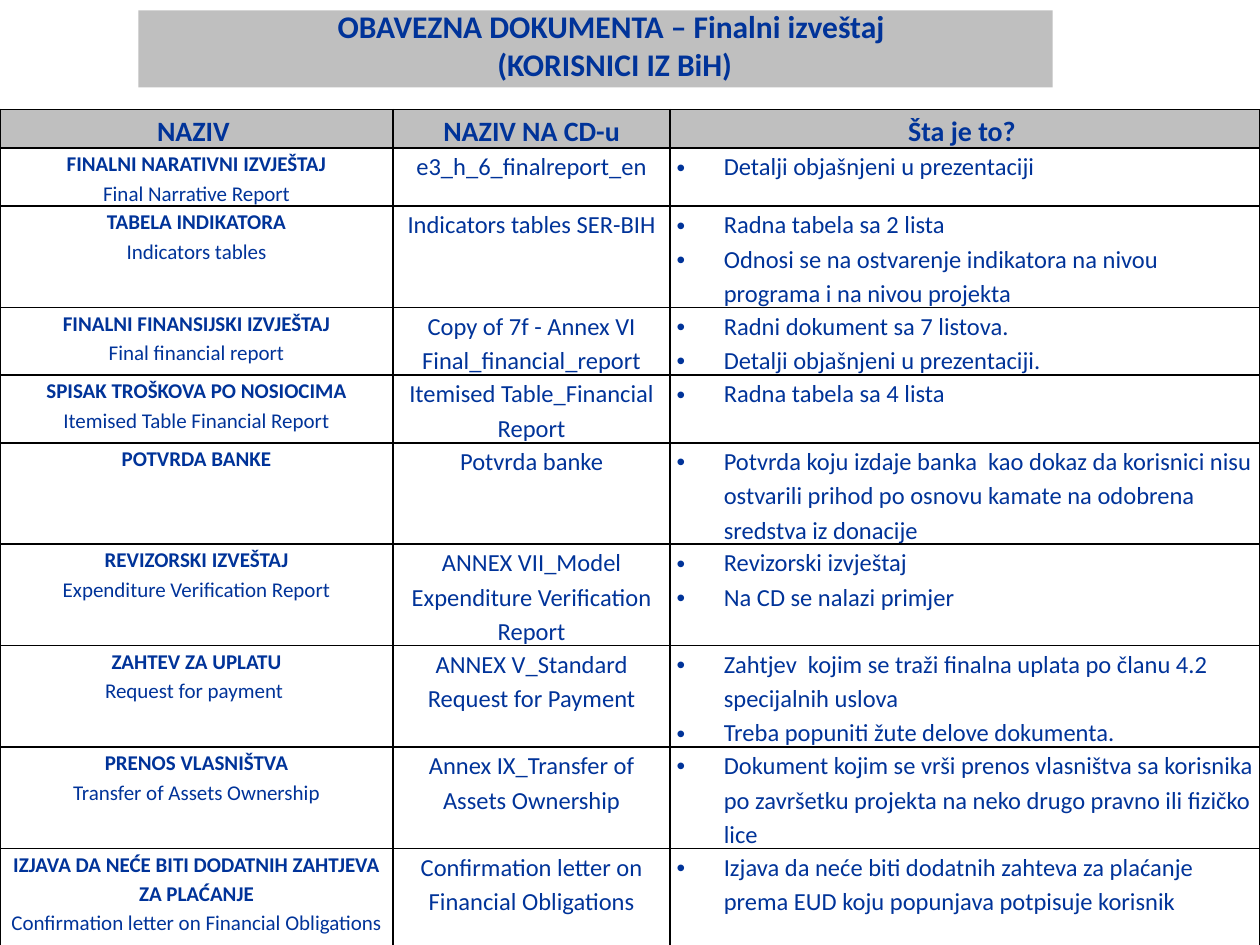
"""Builds a slide listing the mandatory documents of the final report."""
from lxml import etree
from pptx import Presentation
from pptx.dml.color import RGBColor
from pptx.enum import shapes, text
from pptx.oxml.ns import qn
from pptx.util import Pt

BLUE, GREY, BLACK = "003399", "BFBFBF", "000000"
FONT = "Calibri"
TITLE = ["OBAVEZNA DOKUMENTA – Finalni izveštaj ", "(KORISNICI IZ BiH)"]
HEADERS = ["NAZIV ", "NAZIV NA CD-u", "Šta je to? "]
COL_WIDTHS = [224.6, 158.4, 337]
HEADER_HEIGHT = 16.6
DOCUMENTS = [
    (32.4, "FINALNI NARATIVNI IZVJEŠTAJ", "Final Narrative Report",
     "e3_h_6_finalreport_en", ["Detalji objašnjeni u prezentaciji"]),
    (54.7, "TABELA INDIKATORA", "Indicators tables", "Indicators tables SER-BIH",
     ["Radna tabela sa 2 lista",
      "Odnosi se na ostvarenje indikatora na nivou programa i na nivou projekta"]),
    (36.7, "FINALNI FINANSIJSKI IZVJEŠTAJ", "Final financial report",
     "Copy of 7f - Annex VI Final_financial_report",
     ["Radni dokument sa 7 listova.", "Detalji objašnjeni u prezentaciji."]),
    (36.7, "SPISAK TROŠKOVA PO NOSIOCIMA", "Itemised Table Financial Report",
     "Itemised Table_Financial Report", ["Radna tabela sa 4 lista"]),
    (54.7, "POTVRDA BANKE", None, "Potvrda banke",
     ["Potvrda koju izdaje banka  kao dokaz da korisnici nisu ostvarili prihod "
      "po osnovu kamate na odobrena sredstva iz donacije"]),
    (54.7, "REVIZORSKI IZVEŠTAJ", "Expenditure Verification Report",
     "ANNEX VII_Model Expenditure Verification Report",
     ["Revizorski izvještaj", "Na CD se nalazi primjer"]),
    (54.7, "ZAHTEV ZA UPLATU", "Request for payment ",
     "ANNEX V_Standard Request for Payment",
     ["Zahtjev  kojim se traži finalna uplata po članu 4.2 specijalnih uslova",
      "Treba popuniti žute delove dokumenta."]),
    (54.7, "PRENOS VLASNIŠTVA", "Transfer of Assets Ownership",
     "Annex IX_Transfer of Assets Ownership",
     ["Dokument kojim se vrši prenos vlasništva sa korisnika po završetku "
      "projekta na neko drugo pravno ili fizičko lice"]),
    (64.8, "IZJAVA DA NEĆE BITI DODATNIH ZAHTJEVA ZA PLAĆANJE",
     "Confirmation letter on Financial Obligations",
     "Confirmation letter on Financial Obligations",
     ["Izjava da neće biti dodatnih zahteva za plaćanje prema EUD koju "
      "popunjava potpisuje korisnik"]),
]


def paint(fill, color):
    fill.solid()
    fill.fore_color.rgb = RGBColor.from_string(color)


def write(tf, content, size, bold=False, bullet=False, spacing=1.15, first=True):
    p = tf.paragraphs[0] if first else tf.add_paragraph()
    p.alignment = text.PP_ALIGN.LEFT if bullet else text.PP_ALIGN.CENTER
    if bullet:
        pPr = p._p.get_or_add_pPr()
        pPr.set("marL", str(Pt(27)))
        pPr.set("indent", str(-Pt(27)))
        etree.SubElement(pPr, qn("a:buFont"), typeface="Arial")
        etree.SubElement(pPr, qn("a:buChar"), char="•")
    p.line_spacing = spacing
    p.space_before = Pt(0)
    r = p.add_run()
    r.text = content
    r.font.name, r.font.size, r.font.bold = FONT, Pt(size), bold
    r.font.color.rgb = RGBColor.from_string(BLUE)


def style_cell(cell, color=None):
    cell.margin_left = cell.margin_right = Pt(3.6)
    cell.margin_top = cell.margin_bottom = Pt(0)
    tcPr = cell._tc.get_or_add_tcPr()
    for side in ("lnL", "lnR", "lnT", "lnB"):
        ln = etree.SubElement(tcPr, qn("a:" + side), w=str(Pt(1)))
        fill = etree.SubElement(ln, qn("a:solidFill"))
        etree.SubElement(fill, qn("a:srgbClr"), val=BLACK)
    if color:
        paint(cell.fill, color)
    else:
        cell.fill.background()
    return cell.text_frame


def add_title(s):
    title = s.shapes.title
    title.left, title.top, title.width, title.height = Pt(184.3), Pt(0), Pt(334), Pt(51)
    tf = title.text_frame
    tf.word_wrap = False
    tf.auto_size = text.MSO_AUTO_SIZE.SHAPE_TO_FIT_TEXT
    tf.vertical_anchor = text.MSO_ANCHOR.MIDDLE
    for i, line in enumerate(TITLE):
        write(tf, line, 18, bold=True, spacing=1.0, first=i == 0)
    band = s.shapes.add_shape(shapes.MSO_SHAPE.RECTANGLE,
                              Pt(79), Pt(6), Pt(522.5), Pt(44))
    band.shadow.inherit = False
    paint(band.fill, GREY)
    band.line.fill.background()
    title._element.addprevious(band._element)


def add_documents(s):
    heights = [HEADER_HEIGHT] + [doc[0] for doc in DOCUMENTS]
    table = s.shapes.add_table(len(heights), len(HEADERS), Pt(0), Pt(62.6),
                               Pt(sum(COL_WIDTHS)), Pt(sum(heights))).table
    table.first_row = table.horz_banding = False
    for column, width in zip(table.columns, COL_WIDTHS):
        column.width = Pt(width)
    for row, height in zip(table.rows, heights):
        row.height = Pt(height)
    for cell, header in zip(table.rows[0].cells, HEADERS):
        write(style_cell(cell, GREY), header, 16, bold=True)
    for i, (_, name, english, file_name, notes) in enumerate(DOCUMENTS, 1):
        name_tf, file_tf, notes_tf = [style_cell(c) for c in table.rows[i].cells]
        write(name_tf, name, 12, bold=True)
        if english:
            write(name_tf, english, 12, first=False)
        write(file_tf, file_name, 14)
        for j, note in enumerate(notes):
            write(notes_tf, note, 14, bullet=True, first=j == 0)


def main():
    prs = Presentation()
    prs.slide_width, prs.slide_height = Pt(720), Pt(540)
    s = prs.slides.add_slide(prs.slide_layouts[5])
    add_title(s)
    add_documents(s)
    prs.save("out.pptx")


if __name__ == "__main__":
    main()
